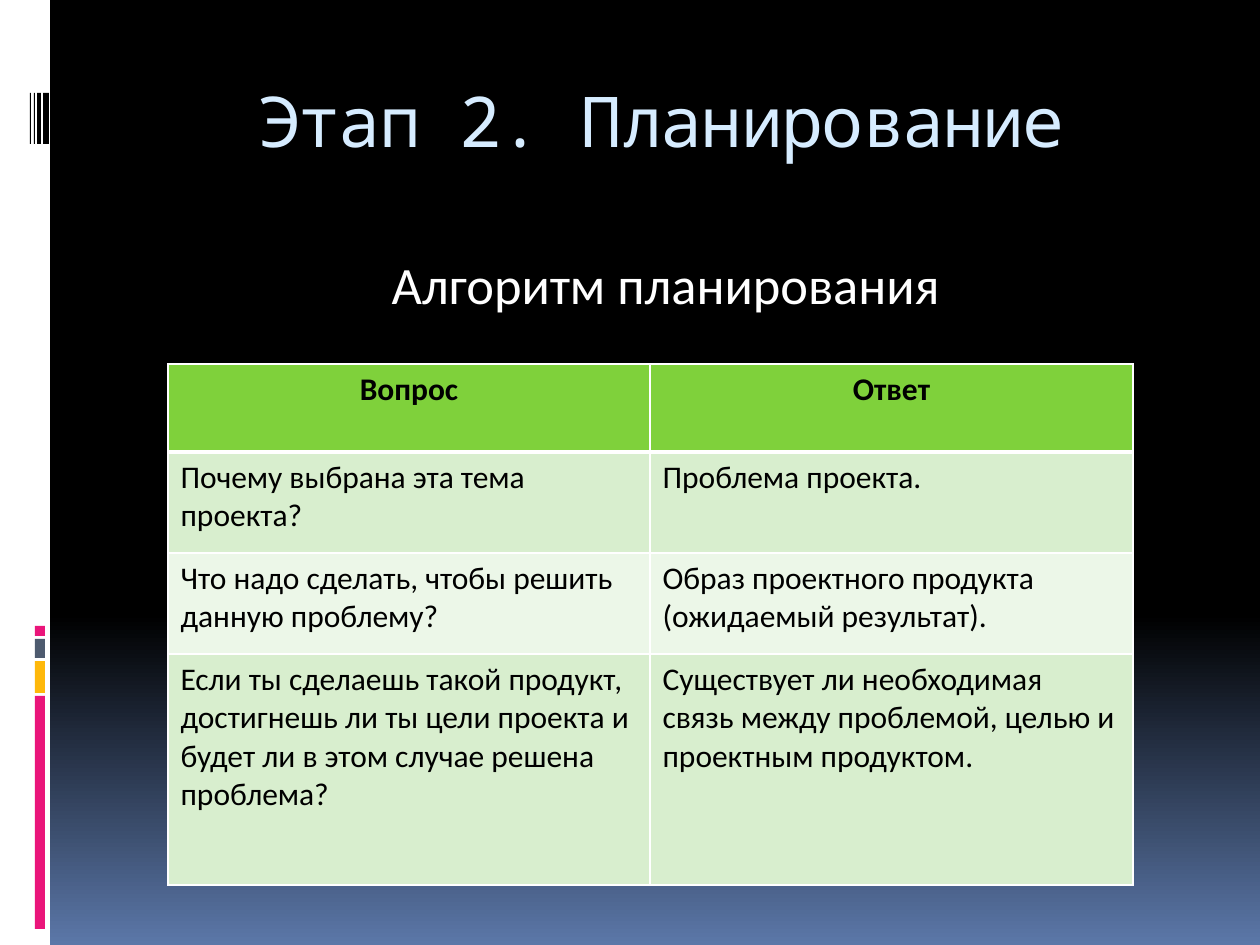
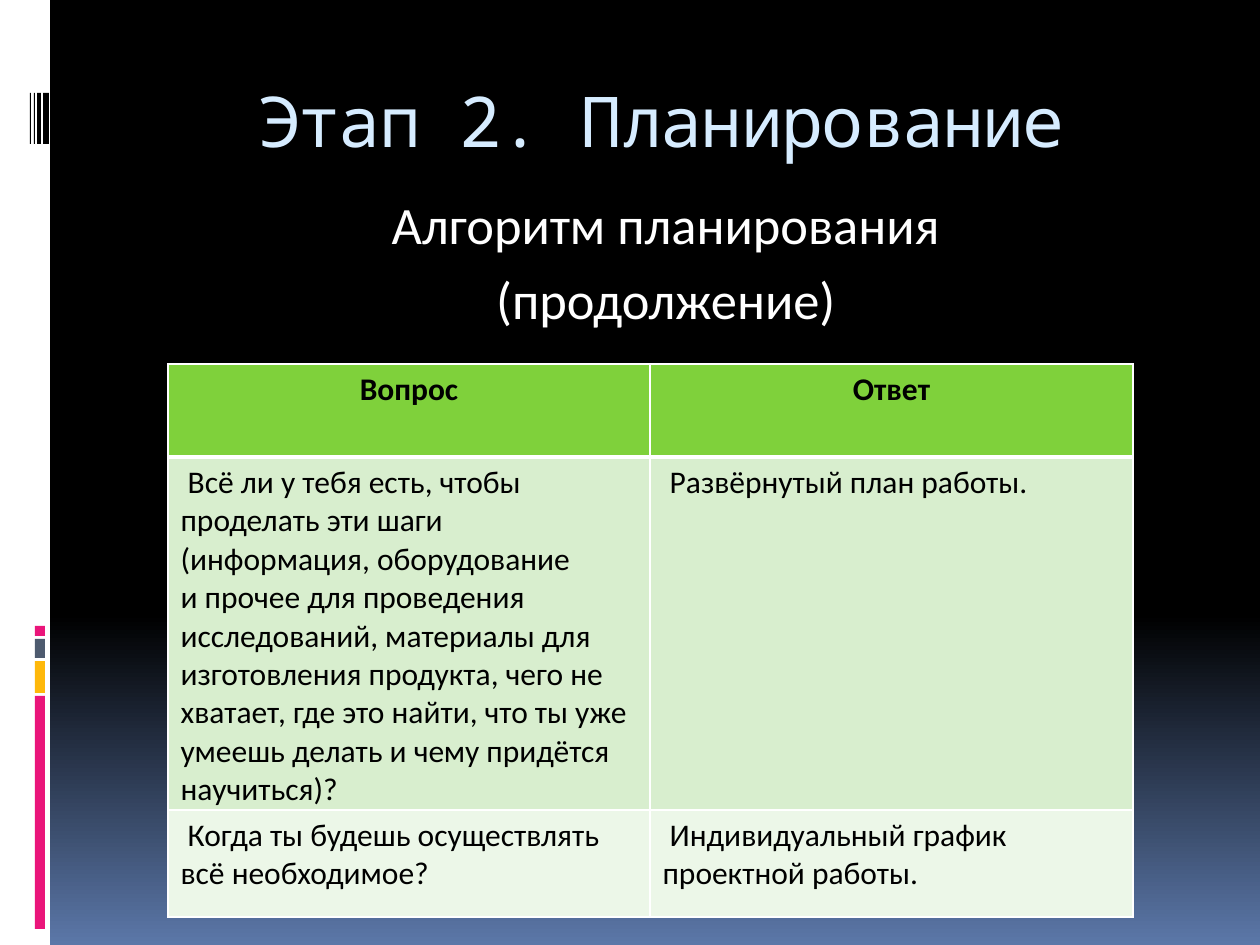
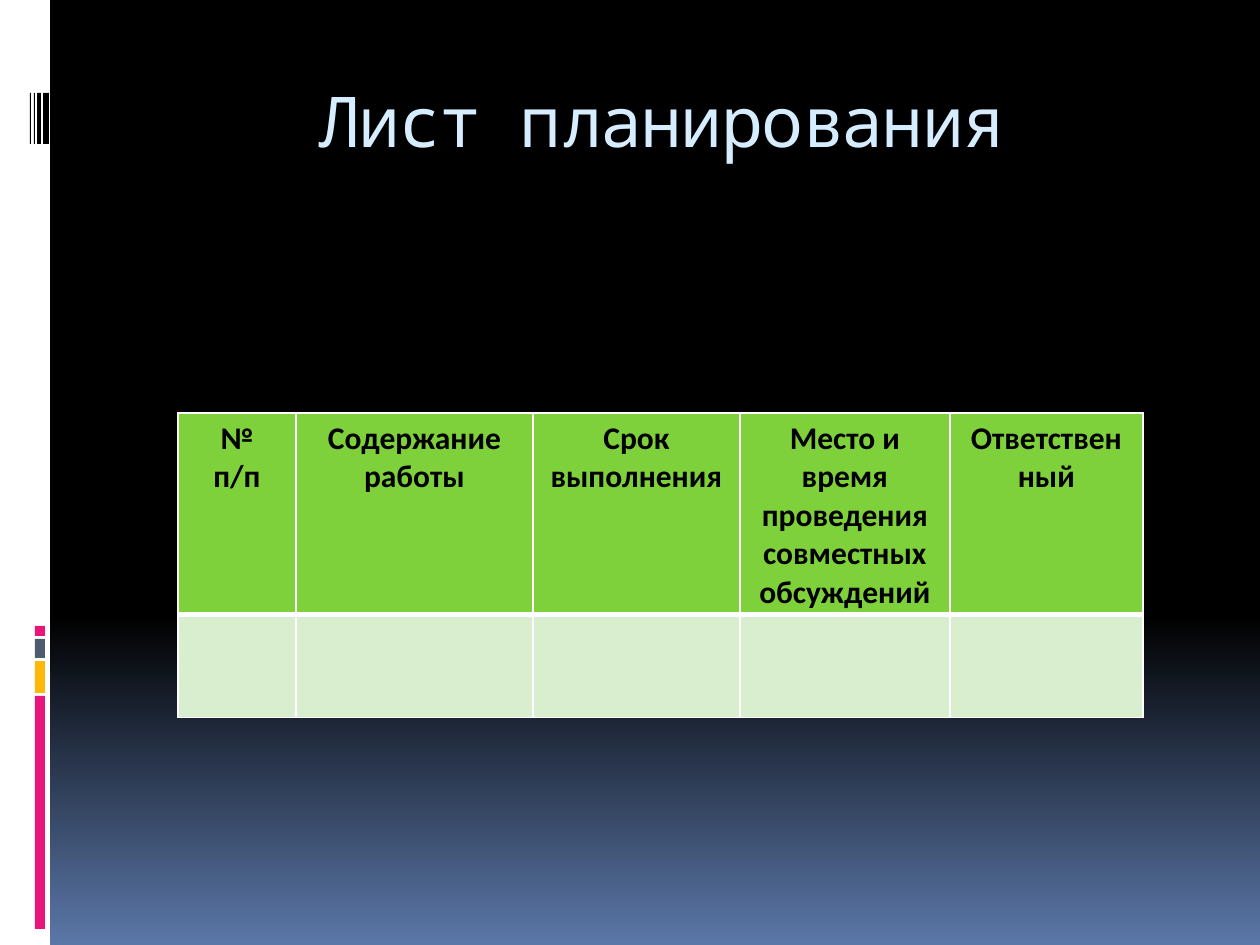
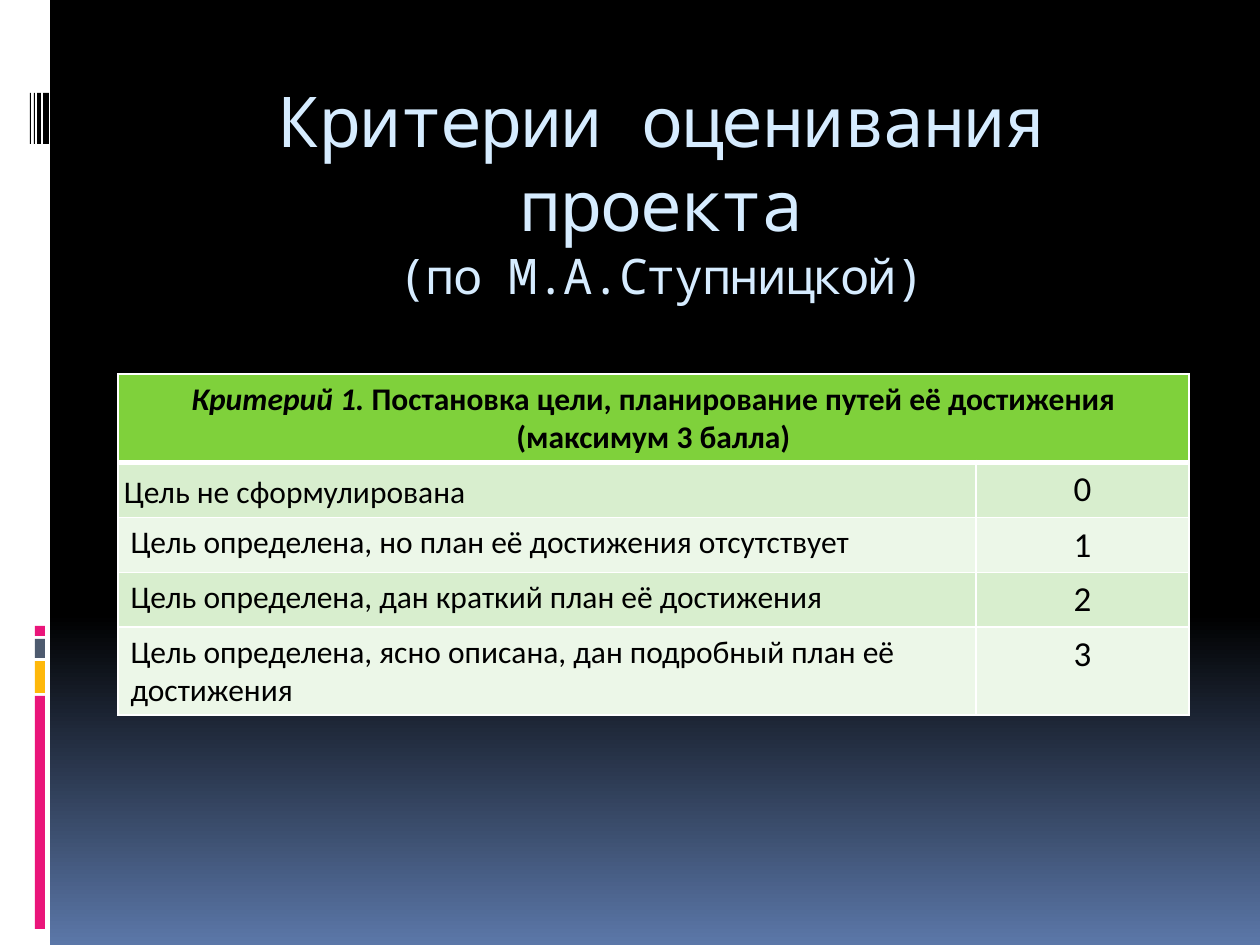
from lxml import etree
from pptx import Presentation
from pptx.dml.color import RGBColor
from pptx.enum.shapes import MSO_SHAPE
from pptx.enum.text import MSO_ANCHOR, PP_ALIGN
from pptx.oxml.ns import qn
from pptx.util import Pt

RECT = MSO_SHAPE.RECTANGLE
TOP = MSO_ANCHOR.TOP
LEFT, CENTER = PP_ALIGN.LEFT, PP_ALIGN.CENTER

EMU_PER_PX = 914400 / 126
SLIDE_W, SLIDE_H = 1260, 945

WHITE, BLACK = "FFFFFF", "000000"
PINK, YELLOW, SLATE, SKY = "EA157A", "FEB80A", "4E5B6F", "5B77A8"
HEADER_FILL = "7FD13B"
BAND_FILLS = ("D8EECE", "ECF7E8")

TITLE_FONT = {"size": Pt(40), "name": "Noto Sans Mono", "color": "D6ECFF"}
BODY_FONT = {"size": Pt(30), "name": "Calibri", "color": WHITE}
CELL_FONT = {"size": Pt(18), "name": "Calibri", "color": BLACK, "bold": False}
HEADER_FONT = {**CELL_FONT, "bold": True}
SCORE_FONT = {**CELL_FONT, "size": Pt(20)}

TITLE_BOX = (126, 71, 1071, 126)
PLAN_HEADER = ["Вопрос", "Ответ"]
PLAN_COLS = (482, 483)

# x, width
BARCODE = [(43, 6), (37, 4), (34, 1), (30, 1)]
# y, height, colour
SIDE_BLOCKS = [(696, 233, PINK), (661, 32, YELLOW), (639, 19, SLATE), (626, 10, PINK)]


def px(n):
    return round(n * EMU_PER_PX)


def rgb(value):
    return RGBColor.from_string(value)


def add_runs(p, runs, font):
    """Write a string, or a list of (text, font changes), into a paragraph."""
    for text, changes in [(runs, {})] if isinstance(runs, str) else runs:
        r = p.add_run()
        r.text = text
        for name, value in {**font, **changes}.items():
            if name == "color":
                r.font.color.rgb = rgb(value)
            else:
                setattr(r.font, name, value)


def fill_text(tf, paragraphs, font, **layout):
    for i, runs in enumerate(paragraphs):
        p = tf.add_paragraph() if i else tf.paragraphs[0]
        for name, value in layout.items():
            setattr(p, name, value)
        add_runs(p, runs, font)


def add_text_box(s, box):
    tf = s.shapes.add_textbox(*map(px, box)).text_frame
    tf.word_wrap = True
    tf.vertical_anchor = TOP
    return tf


def add_block(s, box, color):
    sp = s.shapes.add_shape(RECT, *map(px, box))
    sp.shadow.inherit = False
    sp.fill.solid()
    sp.fill.fore_color.rgb = rgb(color)
    sp.line.fill.background()


def set_background(master):
    fill = master.background.fill
    fill.gradient()
    fill.gradient_angle = 270
    for stop, position, color in zip(fill.gradient_stops, (0.65, 1), (BLACK, SKY)):
        stop.position = position
        stop.color.rgb = rgb(color)


def add_side_band(s):
    add_block(s, (0, 0, 50, SLIDE_H), WHITE)
    for y, h, color in SIDE_BLOCKS:
        add_block(s, (35, y, 10, h), color)
    for x, w in BARCODE:
        add_block(s, (x, 93, w, 51), BLACK)


def add_title(s, title, note=None):
    p = add_text_box(s, TITLE_BOX).paragraphs[0]
    p.alignment = CENTER
    add_runs(p, title, TITLE_FONT)
    if note:
        p.add_line_break()
        add_runs(p, note, {**TITLE_FONT, "size": Pt(28)})
    for r in p.runs:
        r._r.get_or_add_rPr().set("spc", "-100")


def add_subtitle(s, box, lines):
    tf = add_text_box(s, box)
    fill_text(tf, lines, BODY_FONT, alignment=CENTER, space_before=Pt(7))
    for p in tf.paragraphs:
        pPr = p._p.get_or_add_pPr()
        pPr.set("marL", str(px(57)))
        pPr.set("indent", str(-px(48)))


def set_borders(cell, bottom):
    """Draw white cell borders, 1 pt wide except for the given bottom width."""
    tcPr = cell._tc.get_or_add_tcPr()
    for i, (side, width) in enumerate(zip("LRTB", (1, 1, 1, bottom))):
        ln = etree.Element(qn(f"a:ln{side}"), w=str(Pt(width)))
        solid = etree.SubElement(ln, qn("a:solidFill"))
        etree.SubElement(solid, qn("a:srgbClr"), val=WHITE)
        tcPr.insert(i, ln)


def add_grid(s, box, cols, row_heights, rows):
    """Add a table with a header row; a cell is a string or a list of paragraphs."""
    frame = s.shapes.add_table(len(rows), len(cols), *map(px, box))
    table = frame.table
    for col, w in zip(table.columns, cols):
        col.width = px(w)
    for i, (row, h) in enumerate(zip(table.rows, row_heights)):
        row.height = px(h)
        header = i == 0
        for cell, content in zip(row.cells, rows[i]):
            cell.fill.solid()
            cell.fill.fore_color.rgb = rgb(HEADER_FILL if header else BAND_FILLS[(i - 1) % 2])
            set_borders(cell, bottom=3 if header else 1)
            score = isinstance(content, int)
            font = HEADER_FONT if header else SCORE_FONT if score else CELL_FONT
            paragraphs = content if isinstance(content, list) else [str(content)]
            if content:
                fill_text(cell.text_frame, paragraphs, font,
                          alignment=CENTER if header or score else LEFT)
    frame.height = px(box[3])
    return table


def add_slide(prs, title, note=None):
    s = prs.slides.add_slide(prs.slide_layouts[6])
    add_side_band(s)
    add_title(s, title, note)
    return s


def add_plan_slide(prs, subtitle_box, subtitle, table_height, row_heights, rows):
    s = add_slide(prs, "Этап 2. Планирование")
    add_subtitle(s, subtitle_box, subtitle)
    add_grid(s, (168, 364, sum(PLAN_COLS), table_height), PLAN_COLS, row_heights,
             [PLAN_HEADER, *rows])


def add_sheet_slide(prs):
    s = add_slide(prs, "Лист планирования")
    cols = (118, 237, 207, 210, 193)
    header = [["№", "п/п"], "Содержание работы", "Срок выполнения",
              "Место и время проведения совместных обсуждений", "Ответственный"]
    add_grid(s, (178, 413, sum(cols), 305), cols, (103, 103), [header, [""] * len(cols)])


def add_criteria_slide(prs):
    s = add_slide(prs, "Критерии оценивания проекта", "(по М.А.Ступницкой)")
    cols = (858, 213)
    criterion = [("Критерий 1.", {"italic": True}),
                 ("\u00a0Постановка цели, планирование путей её достижения (максимум 3 балла)", {})]
    levels = ["Цель не сформулирована",
              "Цель определена, но план её достижения отсутствует",
              "Цель определена, дан краткий план её достижения",
              "Цель определена, ясно описана, дан подробный план её достижения"]
    rows = [[[criterion], ""]] + [[level, [str(score)]] for score, level in enumerate(levels)]
    table = add_grid(s, (118, 374, sum(cols), 343), cols, [52] * len(rows), rows)
    table.cell(0, 0).merge(table.cell(0, 1))
    for i in range(1, len(rows)):
        p = table.cell(i, 1).text_frame.paragraphs[0]
        p.alignment = CENTER
        p.runs[0].font.size = SCORE_FONT["size"]

    first = table.cell(1, 0)
    for side in ("left", "right", "top", "bottom"):
        setattr(first, f"margin_{side}", px(6))
    p = first.text_frame.paragraphs[0]
    p.line_spacing = 1.15
    p.space_after = Pt(10)


def main():
    prs = Presentation()
    prs.slide_width, prs.slide_height = px(SLIDE_W), px(SLIDE_H)
    set_background(prs.slide_master)
    add_plan_slide(
        prs, (126, 246, 1071, 630), ["Алгоритм планирования"], 521, (88, 101, 101, 231),
        [["Почему выбрана эта тема проекта?", "Проблема проекта."],
         ["Что надо сделать, чтобы решить данную проблему?",
          "Образ проектного продукта (ожидаемый результат)."],
         ["Если ты сделаешь такой продукт, достигнешь ли ты цели проекта "
          "и будет ли в этом случае решена проблема?",
          "Существует ли необходимая связь между проблемой, целью и проектным продуктом."]])
    add_plan_slide(
        prs, (126, 186, 1071, 689), ["Алгоритм планирования", "(продолжение)"],
        553, (93, 107, 107),
        [[[" Всё ли у тебя есть, чтобы проделать эти шаги (информация, оборудование",
           "и прочее для проведения исследований, материалы для изготовления продукта, "
           "чего не хватает, где это найти, что ты уже умеешь делать "
           "и чему придётся научиться)?"],
          " Развёрнутый план работы."],
         [" Когда ты будешь осуществлять всё необходимое?",
          " Индивидуальный график проектной работы."]])
    add_sheet_slide(prs)
    add_criteria_slide(prs)
    prs.save("out.pptx")


if __name__ == "__main__":
    main()
